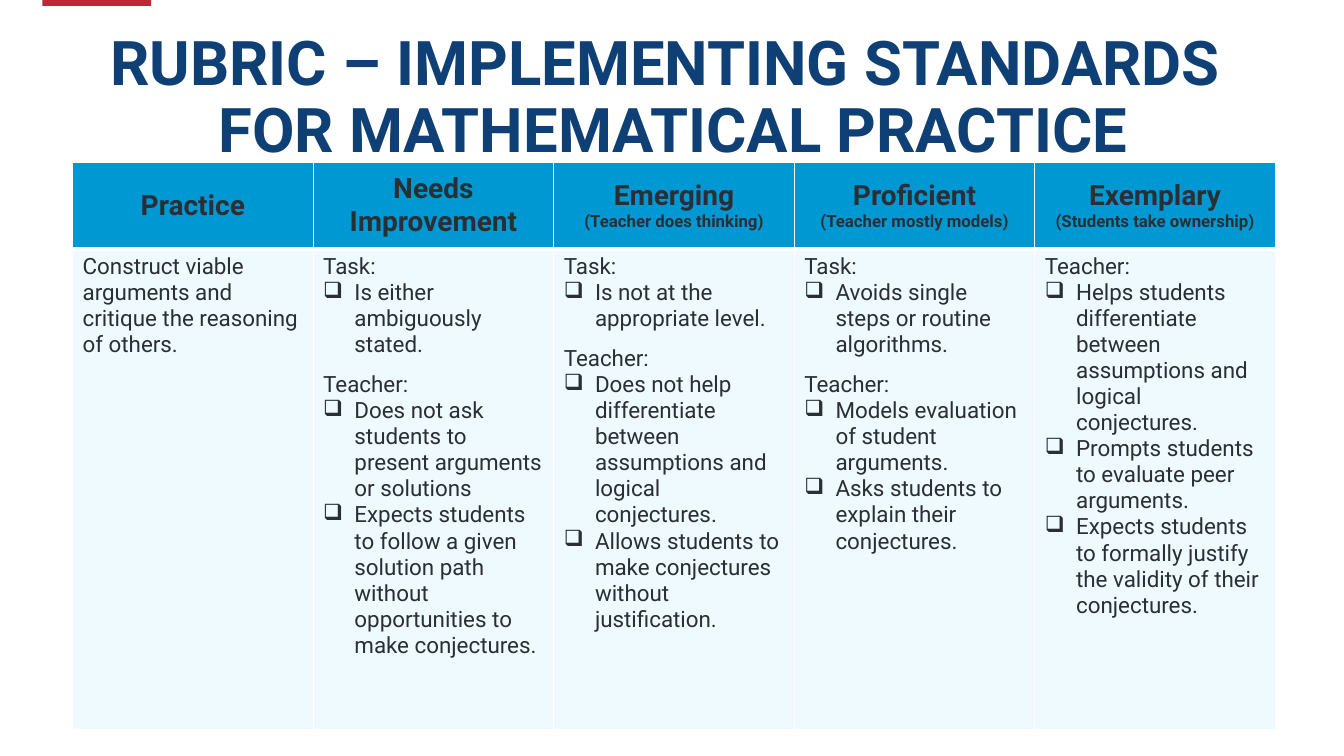
from lxml import etree
from pptx import Presentation
from pptx.dml.color import RGBColor
from pptx.enum.shapes import MSO_SHAPE
from pptx.enum.text import MSO_ANCHOR, MSO_AUTO_SIZE, PP_ALIGN
from pptx.oxml.ns import qn
from pptx.util import Inches, Pt

RECT = MSO_SHAPE.RECTANGLE
MIDDLE, TOP = MSO_ANCHOR.MIDDLE, MSO_ANCHOR.TOP
CENTER, LEFT = PP_ALIGN.CENTER, PP_ALIGN.LEFT
NO_FIT = MSO_AUTO_SIZE.NONE

COLORS = {"red": "C12637", "navy": "0E3F75", "ink": "2A2F36",
          "head": "0098D3", "body": "EFFAFF", "line": "FFFFFF"}
FONT = "Roboto"
MARK = "❑"

TITLE = "RUBRIC – IMPLEMENTING STANDARDS \vFOR MATHEMATICAL PRACTICE"
HEADS = [
    ("Practice",),
    ("Needs Improvement",),
    ("Emerging", "(Teacher does thinking)"),
    ("Proficient", "(Teacher mostly models)"),
    ("Exemplary", "(Students take ownership)"),
]
GROUPS = [
    [("Construct viable arguments and critique the reasoning of others.", [])],
    [("Task:", ["Is either ambiguously stated."]),
     ("Teacher:", [
         "Does not ask students to present arguments or solutions",
         "Expects students to follow a given solution path without "
         "opportunities to make conjectures."])],
    [("Task:", ["Is not at the appropriate level."]),
     ("Teacher:", [
         "Does not help differentiate between assumptions and logical conjectures.",
         "Allows students to make conjectures without justification."])],
    [("Task:", ["Avoids single steps or routine algorithms."]),
     ("Teacher:", [
         "Models evaluation of student arguments.",
         "Asks students to explain their conjectures."])],
    [("Teacher:", [
        "Helps students differentiate between assumptions and logical conjectures.",
        "Prompts students to evaluate peer arguments.",
        "Expects students to formally justify the validity of their conjectures."])],
]
ROWS = (0.86, 4.77)
WIDTH = 11.93


def color(name):
    return RGBColor.from_string(COLORS[name])


def write(frame, text, first=False, size=16, bold=False, ink="ink",
          align=LEFT, before=0, bullet=False):
    para = frame.paragraphs[0] if first else frame.add_paragraph()
    para.text = text
    para.alignment = align
    para.space_before = Pt(before)
    if bullet:
        props = para._p.get_or_add_pPr()
        props.set("marL", str(Inches(0.31)))
        props.set("indent", str(Inches(-0.31)))
        etree.SubElement(props, qn("a:buChar"), char=MARK)
    for run in para.runs:
        font = run.font
        font.name, font.size, font.bold = FONT, Pt(size), bold
        font.color.rgb = color(ink)
    return para


def style(cell, fill, anchor, base):
    cell.vertical_anchor = anchor
    cell.fill.solid()
    cell.fill.fore_color.rgb = color(fill)
    props = cell._tc.get_or_add_tcPr()
    sides = {"lnL": 1, "lnR": 1, "lnT": 1, "lnB": base}
    for spot, (side, width) in enumerate(sides.items()):
        line = etree.Element(qn("a:" + side), w=str(Pt(width)))
        paint = etree.SubElement(line, qn("a:solidFill"))
        etree.SubElement(paint, qn("a:srgbClr"), val=COLORS["line"])
        props.insert(spot, line)


def main():
    deck = Presentation()
    deck.slide_width, deck.slide_height = Inches(13.33), Inches(7.5)
    slide = deck.slides.add_slide(deck.slide_layouts[5])

    title = slide.shapes.title
    title.left, title.top = Inches(0.43), Inches(0.26)
    title.width, title.height = Inches(12.5), Inches(1.45)
    frame = title.text_frame
    frame.auto_size, frame.vertical_anchor = NO_FIT, MIDDLE
    para = write(frame, TITLE, first=True, size=44, bold=True,
                 ink="navy", align=CENTER)
    para.line_spacing = 0.9

    tab = slide.shapes.add_shape(RECT, Inches(0.42), 0, Inches(1.08), Inches(0.06))
    tab.shadow.inherit = False
    tab.fill.solid()
    tab.fill.fore_color.rgb = color("red")
    tab.line.fill.background()

    table = slide.shapes.add_table(
        len(ROWS), len(HEADS), Inches(0.72), Inches(1.61),
        Inches(WIDTH), Inches(sum(ROWS))).table
    for row, height in zip(table.rows, ROWS):
        row.height = Inches(height)

    for col, (head, groups) in enumerate(zip(HEADS, GROUPS)):
        top, body = table.cell(0, col), table.cell(1, col)
        style(top, "head", MIDDLE, 3)
        style(body, "body", TOP, 1)
        for spot, text in enumerate(head):
            write(top.text_frame, text, first=spot == 0,
                  size=12 if spot else 20, bold=True, align=CENTER)
        for spot, (label, items) in enumerate(groups):
            write(body.text_frame, label, first=spot == 0,
                  before=10 if spot else 0)
            for item in items:
                write(body.text_frame, item, bullet=True)

    deck.save("out.pptx")


if __name__ == "__main__":
    main()
